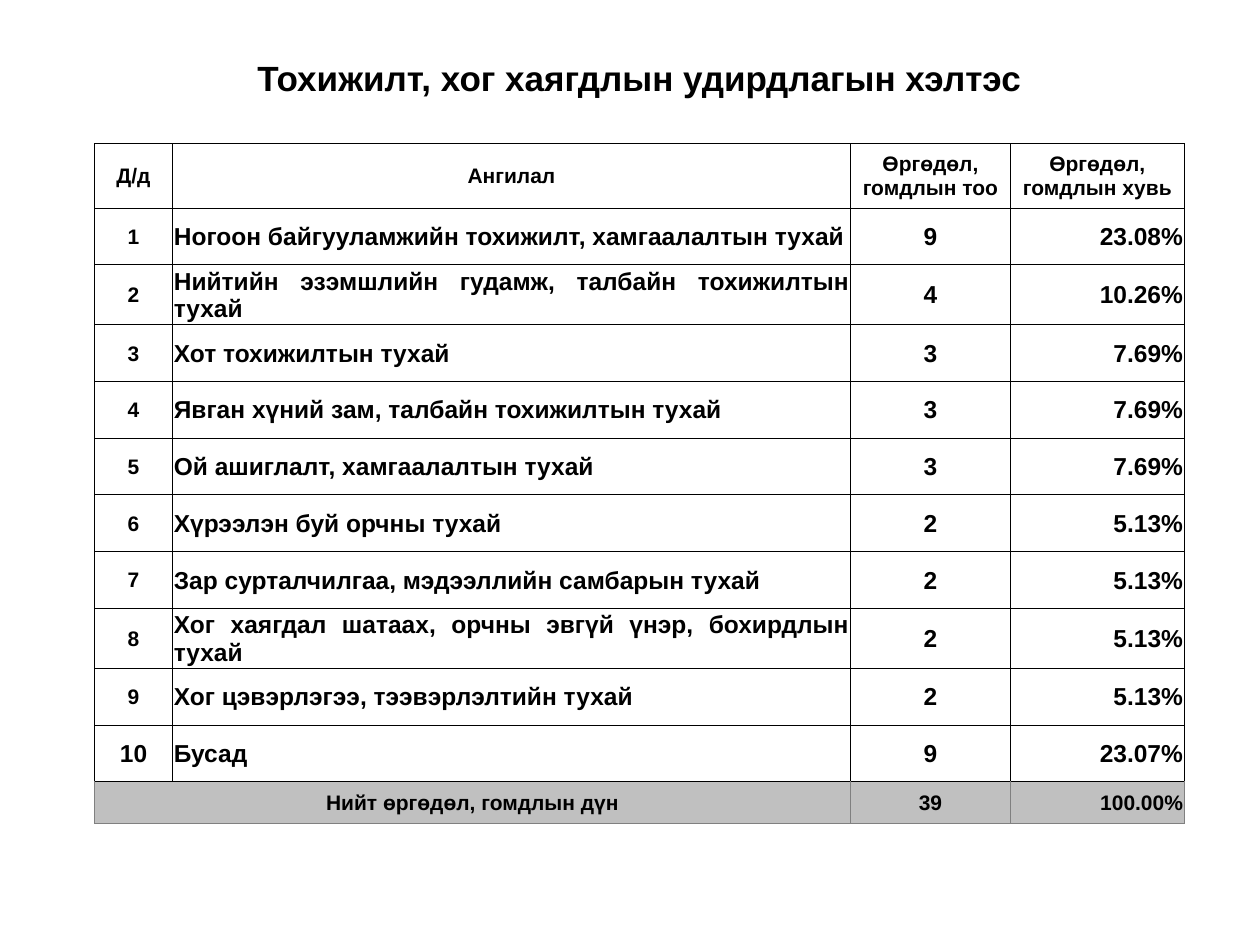
from lxml import etree
from pptx import Presentation
from pptx.dml.color import RGBColor
from pptx.enum.text import MSO_ANCHOR as Anchor, PP_ALIGN as Align
from pptx.oxml.ns import qn
from pptx.util import Inches, Pt

BLACK = RGBColor(0x00, 0x00, 0x00)
WHITE = RGBColor(0xFF, 0xFF, 0xFF)
SILVER = RGBColor(0xC0, 0xC0, 0xC0)
GRAY = RGBColor(0x80, 0x80, 0x80)

TITLE = "Тохижилт, хог хаягдлын удирдлагын хэлтэс"
HEADINGS = ["Д/д", "Ангилал", "Өргөдөл, гомдлын тоо", "Өргөдөл, гомдлын хувь"]
CATEGORIES = [
    ("Ногоон байгууламжийн тохижилт, хамгаалалтын тухай", "9", "23.08%"),
    ("Нийтийн эзэмшлийн гудамж, талбайн тохижилтын тухай", "4", "10.26%"),
    ("Хот тохижилтын тухай", "3", "7.69%"),
    ("Явган хүний зам, талбайн тохижилтын тухай", "3", "7.69%"),
    ("Ой ашиглалт, хамгаалалтын тухай", "3", "7.69%"),
    ("Хүрээлэн буй орчны тухай", "2", "5.13%"),
    ("Зар сурталчилгаа, мэдээллийн самбарын тухай", "2", "5.13%"),
    ("Хог хаягдал шатаах, орчны эвгүй үнэр, бохирдлын тухай", "2", "5.13%"),
    ("Хог цэвэрлэгээ, тээвэрлэлтийн тухай", "2", "5.13%"),
    ("Бусад", "9", "23.07%"),
]
TOTALS = ["Нийт өргөдөл, гомдлын дүн", "", "39", "100.00%"]

COLUMN_WIDTHS = [0.62, 5.38, 1.27, 1.38]
HEADING_HEIGHT, CATEGORY_HEIGHT, TOTAL_HEIGHT = 0.51, 0.45, 0.33
BODY_ALIGNS = [Align.CENTER, Align.JUSTIFY, Align.CENTER, Align.RIGHT]
TOTAL_ALIGNS = [Align.CENTER, Align.CENTER, Align.CENTER, Align.RIGHT]


def style_paragraph(paragraph, size, align):
    paragraph.alignment = align
    font = paragraph.font
    font.name, font.size, font.bold = "Arial", Pt(size), True
    font.color.rgb = BLACK


def set_borders(cell, side_color, top_color):
    properties = cell._tc.get_or_add_tcPr()
    sides = [("a:lnL", side_color), ("a:lnR", side_color),
             ("a:lnT", top_color), ("a:lnB", side_color)]
    for position, (tag, color) in enumerate(sides):
        # Border lines come before the cell fill
        line = etree.Element(qn(tag), w=str(Pt(0.5)))
        fill = etree.SubElement(line, qn("a:solidFill"))
        etree.SubElement(fill, qn("a:srgbClr"), val=str(color))
        properties.insert(position, line)


def fill_cell(cell, text, size, align, background=WHITE, border=BLACK):
    cell.text = text
    style_paragraph(cell.text_frame.paragraphs[0], size, align)
    cell.vertical_anchor = Anchor.MIDDLE
    cell.margin_left = cell.margin_right = cell.margin_top = Inches(0.01)
    cell.margin_bottom = 0
    cell.fill.solid()
    cell.fill.fore_color.rgb = background
    set_borders(cell, border, BLACK)


def add_title(slide, left, top, width, height):
    frame = slide.shapes.add_textbox(left, top, width, height).text_frame
    frame.word_wrap = True
    frame.vertical_anchor = Anchor.TOP
    frame.text = TITLE
    heading = frame.paragraphs[0]
    style_paragraph(heading, 20, Align.CENTER)
    heading.line_spacing = 0.9


def add_complaints_table(slide, left, top, width, height):
    heights = [HEADING_HEIGHT, *[CATEGORY_HEIGHT] * len(CATEGORIES), TOTAL_HEIGHT]
    table = slide.shapes.add_table(
        len(heights), len(COLUMN_WIDTHS), left, top, width, height).table
    for column, column_width in zip(table.columns, COLUMN_WIDTHS):
        column.width = Inches(column_width)
    for row, row_height in zip(table.rows, heights):
        row.height = Inches(row_height)

    # Headings
    for column, heading in enumerate(HEADINGS):
        fill_cell(table.cell(0, column), heading, 12, Align.CENTER)

    # Numbered categories: single-digit numbers are smaller
    for number, category in enumerate(CATEGORIES, start=1):
        for column, text in enumerate([str(number), *category]):
            size = 12 if column == 0 and number < 10 else 14
            fill_cell(table.cell(number, column), text, size, BODY_ALIGNS[column])

    # Totals
    last = len(heights) - 1
    for column, text in enumerate(TOTALS):
        fill_cell(table.cell(last, column), text, 12, TOTAL_ALIGNS[column],
                  SILVER, GRAY)
    table.cell(last, 0).merge(table.cell(last, 1))


def main():
    deck = Presentation()
    deck.slide_width, deck.slide_height = Inches(10), Inches(7.5)
    slide = deck.slides.add_slide(deck.slide_layouts[6])
    add_title(slide, Inches(0.75), Inches(0.44), Inches(8.65), Inches(0.71))
    add_complaints_table(slide, Inches(0.75), Inches(1.14), Inches(8.65), Inches(5.42))
    deck.save("out.pptx")


if __name__ == "__main__":
    main()
